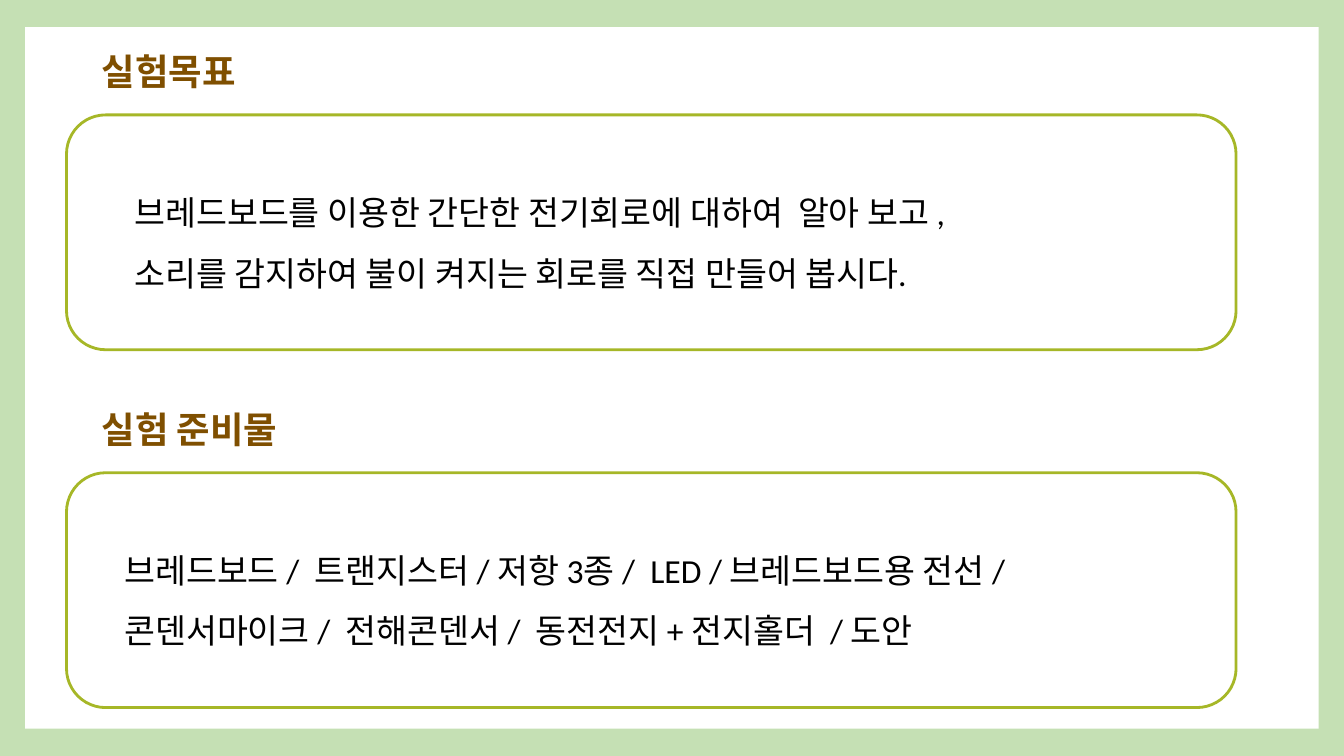
from pptx import Presentation
from pptx.dml.color import RGBColor
from pptx.enum.shapes import MSO_SHAPE
from pptx.enum.text import MSO_ANCHOR, MSO_AUTO_SIZE, PP_ALIGN
from pptx.util import Inches, Pt

SECTIONS = [
    {
        "heading": "실험목표",
        "lines": [
            "브레드보드를 이용한 간단한 전기회로에 대하여  알아 보고 ,",
            "소리를 감지하여 불이 켜지는 회로를 직접 만들어 봅시다.",
        ],
        "indent": 0.56,
    },
    {
        "heading": "실험 준비물",
        "lines": [
            "브레드보드 /  트랜지스터 / 저항 3종 /  LED / 브레드보드용 전선 /",
            "콘덴서마이크 /  전해콘덴서 /  동전전지 + 전지홀더  / 도안",
        ],
        "indent": 0.46,
    },
]

FONT = "Calibri"
GREEN = RGBColor(0xC5, 0xE0, 0xB4)
WHITE = RGBColor(0xFF, 0xFF, 0xFF)
OLIVE = RGBColor(0xA6, 0xB7, 0x27)
BROWN = RGBColor(0x7F, 0x4F, 0x00)
BLACK = RGBColor(0x00, 0x00, 0x00)

WIDTH, HEIGHT = 13.33, 7.5
BORDER_X, BORDER_Y = 0.25, 0.27
HEADING_LEFT, HEADING_WIDTH, HEADING_HEIGHT = 0.91, 2.3, 0.48
BOX_LEFT, BOX_WIDTH, BOX_HEIGHT = 0.66, 11.6, 2.33
FIRST_HEADING, FIRST_BOX, SECTION_PITCH = 0.39, 1.14, 3.55


def style(paragraph, size, color, bold=False):
    paragraph.alignment = PP_ALIGN.LEFT
    for run in paragraph.runs:
        run.font.name = FONT
        run.font.size = Pt(size)
        run.font.bold = bold
        run.font.color.rgb = color


def add_panel(slide, preset, left, top, width, height):
    panel = slide.shapes.add_shape(
        preset, Inches(left), Inches(top), Inches(width), Inches(height))
    panel.shadow.inherit = False
    panel.fill.solid()
    panel.fill.fore_color.rgb = WHITE
    panel.line.fill.background()
    return panel


def place_heading(heading, text, top):
    heading.left, heading.top = Inches(HEADING_LEFT), Inches(top)
    heading.width, heading.height = Inches(HEADING_WIDTH), Inches(HEADING_HEIGHT)
    frame = heading.text_frame
    frame.text = text
    frame.word_wrap = True
    frame.auto_size = MSO_AUTO_SIZE.NONE
    frame.vertical_anchor = MSO_ANCHOR.TOP
    frame.margin_left = frame.margin_right = Inches(0.1)
    frame.margin_top = frame.margin_bottom = Inches(0.1)
    style(frame.paragraphs[0], 26, BROWN, bold=True)


def add_box(slide, lines, indent, top):
    box = add_panel(slide, MSO_SHAPE.ROUNDED_RECTANGLE,
                    BOX_LEFT, top, BOX_WIDTH, BOX_HEIGHT)
    box.line.color.rgb = OLIVE
    box.line.width = Pt(2)
    frame = box.text_frame
    frame.text = "\n".join(lines)
    frame.word_wrap = True
    frame.vertical_anchor = MSO_ANCHOR.MIDDLE
    frame.margin_left = Inches(indent)
    for paragraph in frame.paragraphs:
        paragraph.line_spacing = 1.5
        style(paragraph, 24, BLACK)


def main():
    deck = Presentation()
    deck.slide_width, deck.slide_height = Inches(WIDTH), Inches(HEIGHT)
    slide = deck.slides.add_slide(deck.slide_layouts[5])
    slide.background.fill.solid()
    slide.background.fill.fore_color.rgb = GREEN

    title = slide.shapes.title
    paper = add_panel(slide, MSO_SHAPE.RECTANGLE, BORDER_X, BORDER_Y,
                      WIDTH - 2 * BORDER_X, HEIGHT - 2 * BORDER_Y)
    title._element.addprevious(paper._element)

    for row, section in enumerate(SECTIONS):
        offset = row * SECTION_PITCH
        heading = title if row == 0 else slide.shapes.add_textbox(0, 0, 0, 0)
        place_heading(heading, section["heading"], FIRST_HEADING + offset)
        add_box(slide, section["lines"], section["indent"], FIRST_BOX + offset)

    deck.save("out.pptx")


if __name__ == "__main__":
    main()
